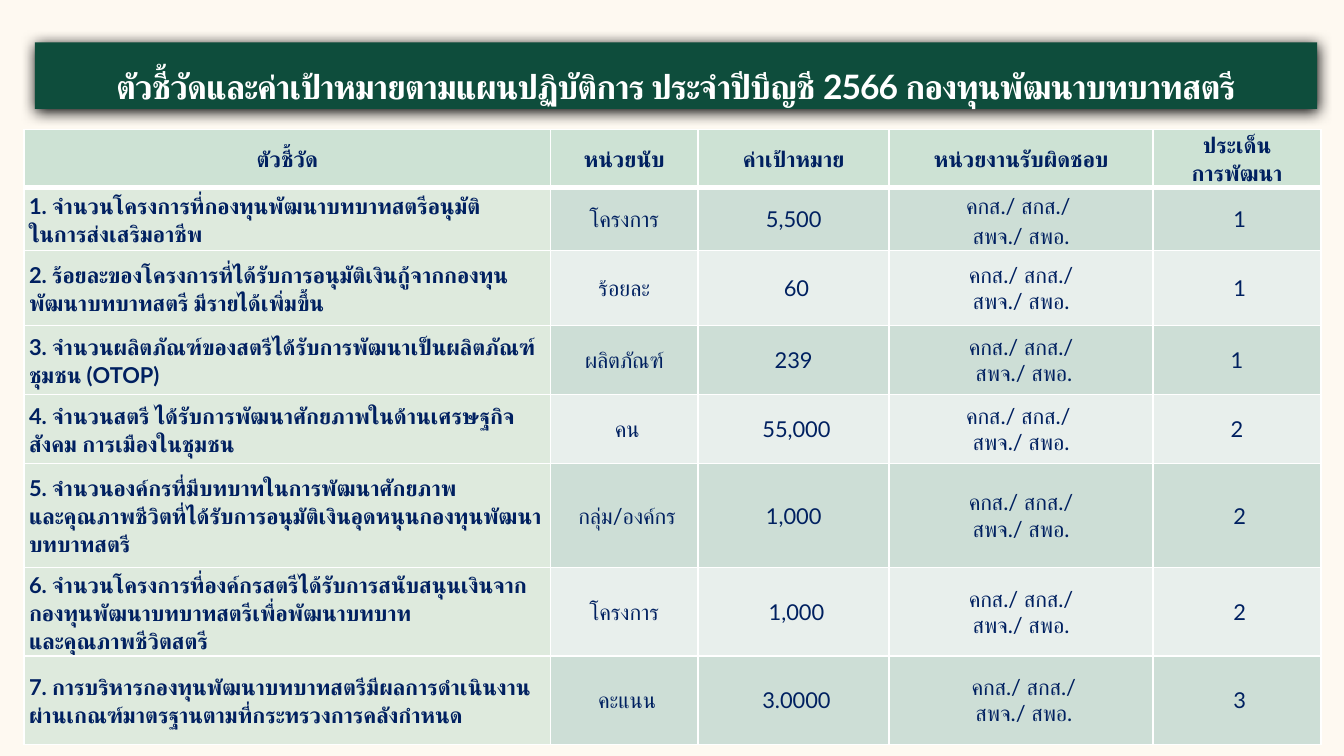
from copy import deepcopy
from dataclasses import dataclass

from lxml import etree
from pptx import Presentation
from pptx.dml.color import RGBColor
from pptx.enum.text import MSO_ANCHOR, MSO_AUTO_SIZE, PP_ALIGN
from pptx.oxml.ns import qn
from pptx.util import Inches, Pt

LEFT, CENTER = PP_ALIGN.LEFT, PP_ALIGN.CENTER
MIDDLE = MSO_ANCHOR.MIDDLE
NO_AUTOFIT = MSO_AUTO_SIZE.NONE
TITLE_ONLY = 5


@dataclass(frozen=True)
class Theme:
    font: str = "Lato"
    background: str = "FEF9F1"
    banner: str = "0E4D3C"
    banner_text: str = "FFFFFF"
    shadow: str = "000000"
    text: str = "002060"
    header: str = "CDE2D4"
    indicator: str = "DEEADD"
    bands: tuple = ("CDDED6", "E8EFEC")
    border: str = "FFFFFF"
    title_size: float = 20
    table_size: float = 13


THEME = Theme()
SLIDE_WIDTH, SLIDE_HEIGHT = Inches(11.11), Inches(6.25)
BANNER_BOX = (0.026, 0.056, 0.954, 0.088)
TABLE_BOX = (0.018, 0.171, 0.965, 0.814)
COLUMN_SHARES = (4.35, 1.22, 1.58, 2.18, 1.39)
ROW_SHARES = (0.48, 0.52, 0.62, 0.57, 0.57, 0.86, 0.73, 0.73)

TITLE = "ตัวชี้วัดและค่าเป้าหมายตามแผนปฏิบัติการ ประจำปีบีญชี 2566 กองทุนพัฒนาบทบาทสตรี"
HEADERS = ("ตัวชี้วัด", "หน่วยนับ", "ค่าเป้าหมาย", "หน่วยงานรับผิดชอบ", "ประเด็น\nการพัฒนา")
OWNERS = "คกส./ สกส./ \nสพจ./ สพอ."
OWNERS_SHIFTED = "คกส./ สกส./\n สพจ./ สพอ."
INDICATORS = (
    ("1. จำนวนโครงการที่กองทุนพัฒนาบทบาทสตรีอนุมัติ\nในการส่งเสริมอาชีพ",
     "โครงการ", "5,500", OWNERS, " 1"),
    ("2. ร้อยละของโครงการที่ได้รับการอนุมัติเงินกู้จากกองทุนพัฒนาบทบาทสตรี มีรายได้เพิ่มขึ้น",
     "ร้อยละ", " 60", " " + OWNERS, " 1"),
    ("3. จำนวนผลิตภัณฑ์ของสตรีได้รับการพัฒนาเป็นผลิตภัณฑ์ชุมชน (OTOP)",
     "ผลิตภัณฑ์", "239", OWNERS_SHIFTED, "1"),
    ("4. จำนวนสตรี ได้รับการพัฒนาศักยภาพในด้านเศรษฐกิจ สังคม การเมืองในชุมชน",
     " คน", " 55,000", OWNERS, "2"),
    ("5. จำนวนองค์กรที่มีบทบาทในการพัฒนาศักยภาพ\n"
     "และคุณภาพชีวิตที่ได้รับการอนุมัติเงินอุดหนุนกองทุนพัฒนาบทบาทสตรี",
     " กลุ่ม/องค์กร", "1,000", " " + OWNERS, " 2"),
    ("6. จำนวนโครงการที่องค์กรสตรีได้รับการสนับสนุนเงินจากกองทุนพัฒนาบทบาทสตรีเพื่อพัฒนาบทบาท\n"
     "และคุณภาพชีวิตสตรี",
     "โครงการ", " 1,000", " " + OWNERS, " 2"),
    ("7. การบริหารกองทุนพัฒนาบทบาทสตรีมีผลการดำเนินงานผ่านเกณฑ์มาตรฐานตามที่กระทรวงการคลังกำหนด",
     " คะแนน", " 3.0000", " " + OWNERS_SHIFTED, " 3"),
)


def place(box):
    """Turn shares of the slide into left, top, width and height."""
    sides = (SLIDE_WIDTH, SLIDE_HEIGHT) * 2
    return [int(share * side) for share, side in zip(box, sides)]


def fill_solid(target, color):
    target.fill.solid()
    target.fill.fore_color.rgb = RGBColor.from_string(color)


def add_color(parent, color):
    etree.SubElement(parent, qn("a:srgbClr"), val=color)


def write_paragraph(paragraph, text, size, color, bold, alignment, line_spacing, tracking=0):
    paragraph.text = text
    paragraph.alignment = alignment
    paragraph.line_spacing = line_spacing
    for run in paragraph.runs:
        font = run.font
        font.name, font.size, font.bold = THEME.font, Pt(size), bold
        font.color.rgb = RGBColor.from_string(color)
        properties = run._r.get_or_add_rPr()
        etree.SubElement(properties, qn("a:cs"), typeface=THEME.font)
        if tracking:
            properties.set("spc", str(int(tracking * 100)))
    for line_break in paragraph._p.findall(qn("a:br")):
        line_break.append(deepcopy(paragraph.runs[0]._r.rPr))


def add_shadow(shape, color, blur, distance):
    effects = etree.SubElement(shape._element.spPr, qn("a:effectLst"))
    shadow = etree.SubElement(
        effects, qn("a:outerShdw"), blurRad=str(Pt(blur)), dist=str(Pt(distance)),
        dir="5400000", algn="ctr", rotWithShape="0")
    add_color(shadow, color)


def add_banner(slide, box):
    banner = slide.shapes.title
    banner.left, banner.top, banner.width, banner.height = place(box)
    fill_solid(banner, THEME.banner)
    add_shadow(banner, THEME.shadow, 8.5, 1)
    frame = banner.text_frame
    frame.word_wrap = True
    frame.auto_size = NO_AUTOFIT
    frame.vertical_anchor = MIDDLE
    frame.margin_left = frame.margin_right = Inches(0.08)
    frame.margin_top = frame.margin_bottom = Inches(0.04)
    write_paragraph(frame.paragraphs[0], TITLE, THEME.title_size, THEME.banner_text,
                    True, CENTER, 1.5, tracking=-0.6)


def set_borders(cell, top, bottom):
    properties = cell._tc.get_or_add_tcPr()
    for side, width in (("L", 1), ("R", 1), ("T", top), ("B", bottom)):
        line = etree.SubElement(properties, qn(f"a:ln{side}"), w=str(Pt(width)))
        add_color(etree.SubElement(line, qn("a:solidFill")), THEME.border)


def format_cell(cell, text, row, column):
    is_header, is_indicator = row == 0, column == 0
    if is_header:
        color = THEME.header
    elif is_indicator:
        color = THEME.indicator
    else:
        color = THEME.bands[(row - 1) % 2]
    set_borders(cell, top=3 if row == 1 else 1, bottom=3 if is_header else 1)
    fill_solid(cell, color)
    cell.vertical_anchor = MIDDLE
    cell.margin_left = cell.margin_right = Inches(0.04)
    cell.margin_top = cell.margin_bottom = 0
    bold = is_header or is_indicator
    if bold:
        spacing = 1.07
    else:
        spacing = 1.15 if (row, column) == (1, 3) else 1.0
    alignment = LEFT if is_indicator and not is_header else CENTER
    write_paragraph(cell.text_frame.paragraphs[0], text, THEME.table_size, THEME.text,
                    bold, alignment, spacing)


def add_indicator_table(slide, box):
    records = (HEADERS,) + INDICATORS
    left, top, width, height = place(box)
    table = slide.shapes.add_table(
        len(records), len(HEADERS), left, top, width, height).table
    table.first_row = table.horz_banding = False
    for column, share in zip(table.columns, COLUMN_SHARES):
        column.width = int(width * share / sum(COLUMN_SHARES))
    for row, share in zip(table.rows, ROW_SHARES):
        row.height = int(height * share / sum(ROW_SHARES))
    for row, record in enumerate(records):
        for column, text in enumerate(record):
            format_cell(table.cell(row, column), text, row, column)


def main():
    presentation = Presentation()
    presentation.slide_width, presentation.slide_height = SLIDE_WIDTH, SLIDE_HEIGHT
    slide = presentation.slides.add_slide(presentation.slide_layouts[TITLE_ONLY])
    fill_solid(slide.background, THEME.background)
    add_banner(slide, BANNER_BOX)
    add_indicator_table(slide, TABLE_BOX)
    presentation.save("out.pptx")


if __name__ == "__main__":
    main()
